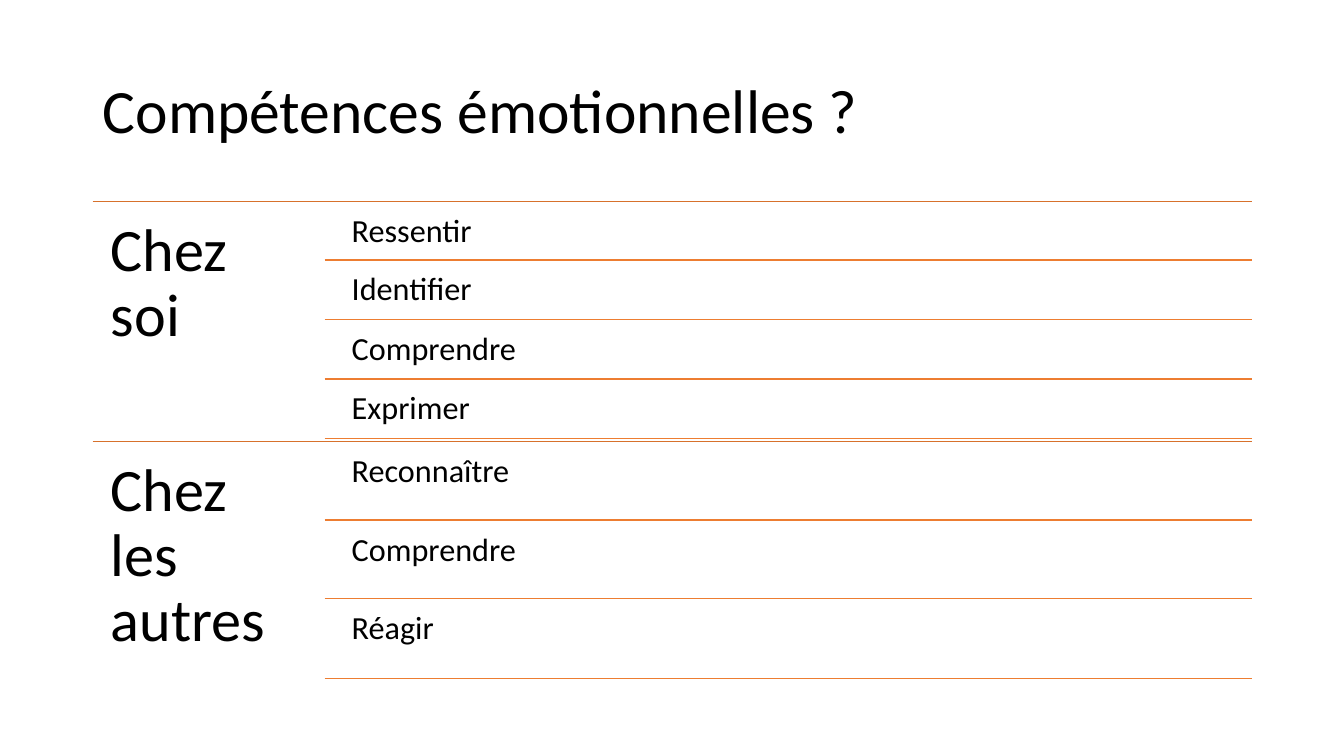
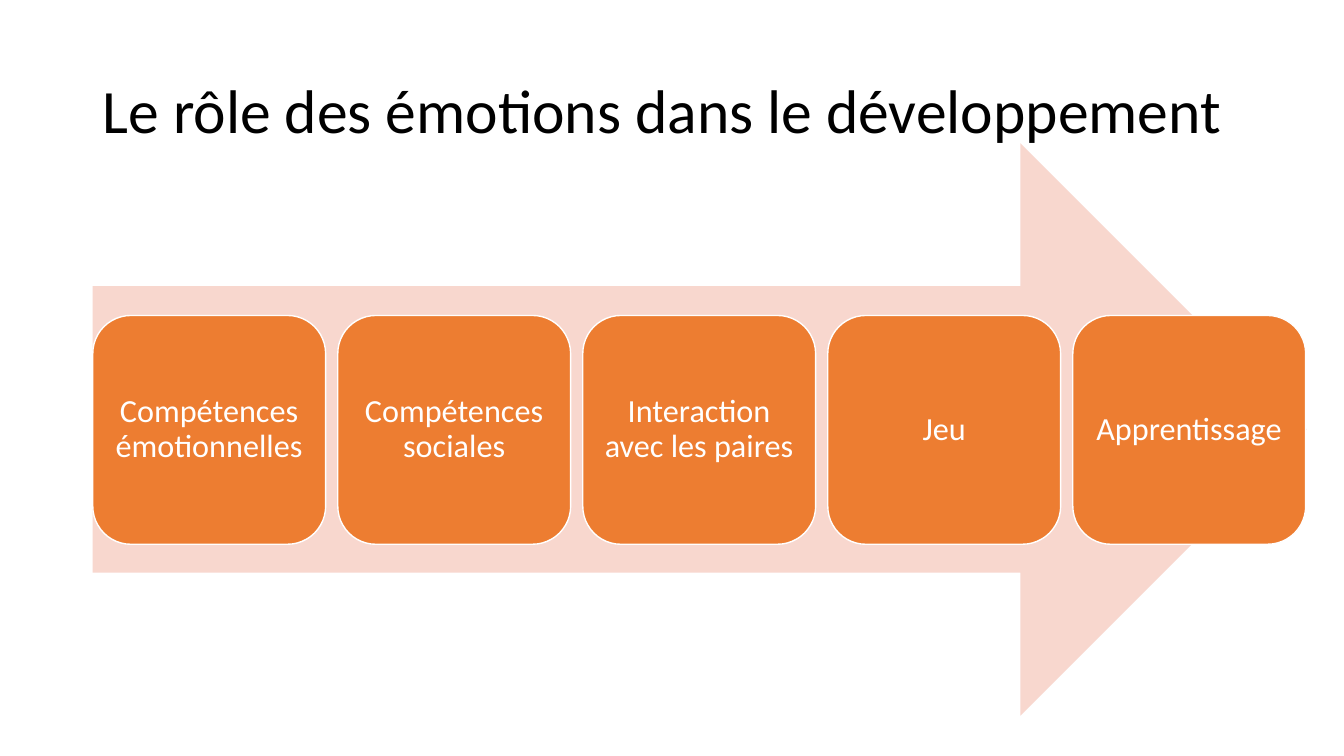
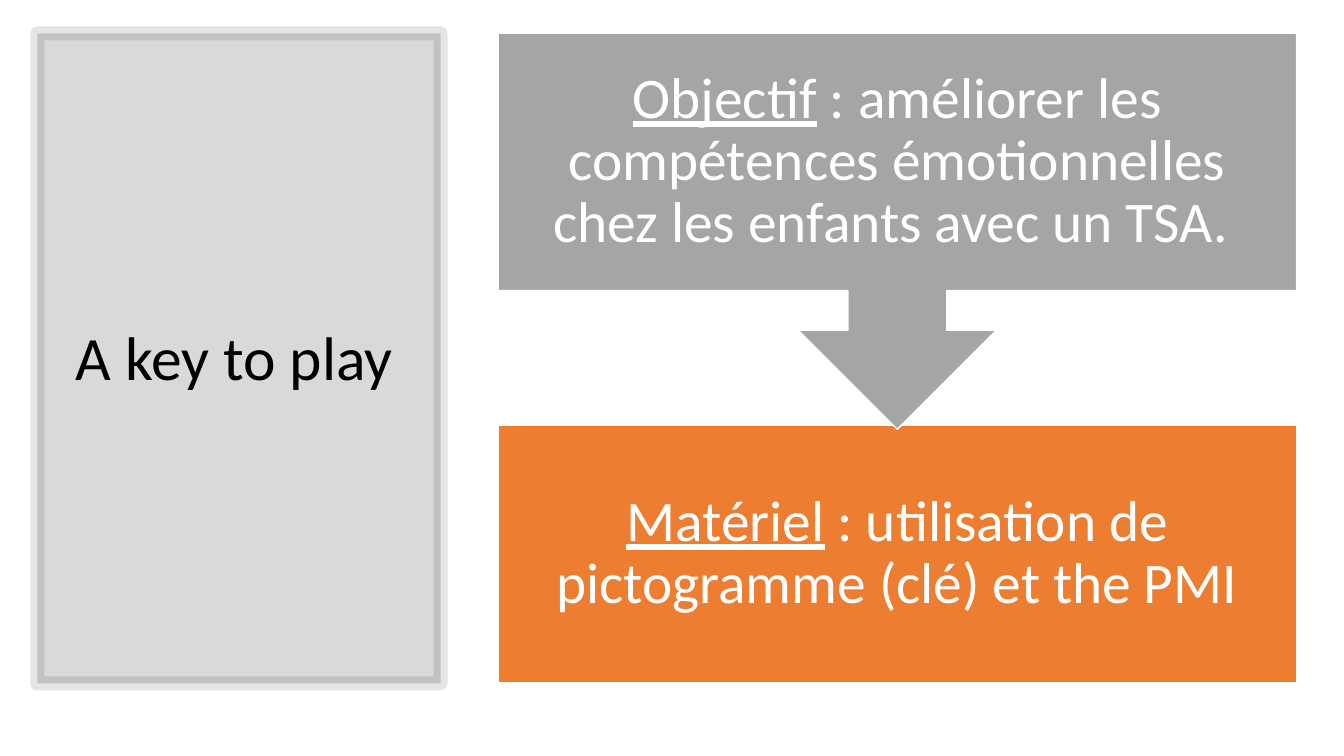
from lxml.etree import SubElement
from pptx import Presentation
from pptx.dml.color import RGBColor
from pptx.enum.shapes import MSO_CONNECTOR as CONNECTOR, MSO_SHAPE as SHAPE
from pptx.enum.text import MSO_ANCHOR as ANCHOR, MSO_AUTO_SIZE as AUTO_SIZE, PP_ALIGN as ALIGN
from pptx.oxml.ns import qn
from pptx.util import Emu, Pt

PX = 9144  # EMU per px, 100 px to the inch
BLACK, WHITE = "000000", "FFFFFF"
ORANGE, DARK_ORANGE, PEACH, GREY = "ED7D31", "D7712C", "F8D7CE", "A5A5A5"


def px(length):
    return Emu(length * PX)


def color(hex_value):
    return RGBColor.from_string(hex_value)


def set_values(target, values):
    for name, value in values.items():
        setattr(target, name, value)


class Deck:
    """Shared style and the slide being drawn."""

    font_name = "Calibri"
    title_size = 44
    line_width = 1

    def __init__(self, width, height):
        self.presentation = Presentation()
        set_values(self.presentation, {"slide_width": px(width), "slide_height": px(height)})
        self.slide = None

    def new_slide(self):
        self.slide = self.presentation.slides.add_slide(self.presentation.slide_layouts[5])

    def place(self, shape, box):
        set_values(shape, dict(zip(("left", "top", "width", "height"), map(px, box))))

    def set_text(self, shape, runs, size, text_color=BLACK, align=ALIGN.LEFT,
                 anchor=ANCHOR.TOP, inset=10, inset_y=None):
        """Fill a shape with one paragraph; runs are (text, underlined) pairs."""
        inset_y = inset if inset_y is None else inset_y
        frame = shape.text_frame
        set_values(frame, {
            "word_wrap": True, "auto_size": AUTO_SIZE.NONE, "vertical_anchor": anchor,
            "margin_left": px(inset), "margin_right": px(inset),
            "margin_top": px(inset_y), "margin_bottom": px(inset_y),
        })
        paragraph = frame.paragraphs[0]
        set_values(paragraph, {"alignment": align, "line_spacing": 0.9})
        for text, underlined in runs:
            run = paragraph.add_run()
            run.text = text
            set_values(run.font, {"name": self.font_name, "size": Pt(size),
                                  "underline": underlined})
            run.font.color.rgb = color(text_color)

    def title(self, text, box=(92, 40, 1150, 145)):
        """Format the title placeholder and bring it in front of what is drawn so far."""
        title = self.slide.shapes.title
        self.place(title, box)
        self.set_text(title, [(text, False)], self.title_size, anchor=ANCHOR.MIDDLE, inset_y=5)
        self.slide.shapes.element.append(title.element)

    def label(self, text, box, size, inset=10):
        text_box = self.slide.shapes.add_textbox(*map(px, box))
        self.set_text(text_box, [(text, False)], size, inset=inset)

    def shape(self, kind, box, fill, line=None, line_width=line_width):
        shape = self.slide.shapes.add_shape(kind, *map(px, box))
        shape.shadow.inherit = False
        shape.fill.solid()
        shape.fill.fore_color.rgb = color(fill)
        if line:
            shape.line.color.rgb = color(line)
            shape.line.width = Pt(line_width)
        else:
            shape.line.fill.background()
        return shape

    def card(self, kind, box, fill, runs, size, inset=10):
        card = self.shape(kind, box, fill, WHITE)
        self.set_text(card, runs, size, WHITE, ALIGN.CENTER, ANCHOR.MIDDLE, inset)

    def panel(self, box, fill_alpha, line_alpha, line_width):
        """Black translucent rectangle; alphas are percentages."""
        panel = self.shape(SHAPE.RECTANGLE, box, BLACK, BLACK, line_width)
        properties = panel.element.spPr
        for owner, alpha in ((properties, fill_alpha), (properties.find(qn("a:ln")), line_alpha)):
            shade = owner.find(qn("a:solidFill")).find(qn("a:srgbClr"))
            SubElement(shade, qn("a:alpha"), val=str(alpha * 1000))

    def rule(self, left, right, top, line_color):
        rule = self.slide.shapes.add_connector(
            CONNECTOR.STRAIGHT, px(left), px(top), px(right), px(top))
        rule.line.color.rgb = color(line_color)
        rule.line.width = Pt(self.line_width)
        SubElement(rule.element.spPr, qn("a:effectLst"))


def skills_slide(deck):
    deck.new_slide()
    deck.title("Compétences émotionnelles ?")
    left, column, right = 92, 322, 1242
    section_height, gap = 238, 3
    rows_height = section_height - gap
    sections = [
        ("Chez soi", ["Ressentir", "Identifier", "Comprendre", "Exprimer"]),
        ("Chez les autres", ["Reconnaître", "Comprendre", "Réagir"]),
    ]
    for index, (heading, skills) in enumerate(sections):
        top = 200 + index * section_height
        deck.rule(left, right, top, DARK_ORANGE)
        deck.label(heading, (left, top, column - left, section_height), 43, inset=18)
        # Rows share the section height equally
        for row, skill in enumerate(skills):
            row_top = top + gap + rows_height * row // len(skills)
            row_bottom = top + rows_height * (row + 1) // len(skills)
            deck.label(skill, (column + 17, row_top, 903, row_bottom - row_top), 23)
            deck.rule(column, right, row_bottom, ORANGE)


def development_slide(deck):
    deck.new_slide()
    left, width, pitch = 92, 231, 243
    deck.shape(SHAPE.RIGHT_ARROW, (left, 142, 1204, 568), PEACH)
    steps = ["Compétences émotionnelles ", "Compétences sociales",
             "Interaction avec les paires", "Jeu", "Apprentissage"]
    for index, step in enumerate(steps):
        box = (left + index * pitch, 313, width, 227)
        deck.card(SHAPE.ROUNDED_RECTANGLE, box, ORANGE, [(step, False)], 23)
    deck.title("Le rôle des émotions dans le développement")


def key_slide(deck):
    deck.new_slide()
    deck.panel((37, 33, 400, 645), fill_alpha=15, line_alpha=10, line_width=10)
    deck.title("A key to play", (65, 70, 346, 575))
    # The callout's arrow tip overlaps the lower card
    cards = [
        (SHAPE.RECTANGLE, 422, 255, ORANGE,
         "Matériel", " : utilisation de pictogramme (clé) et the PMI"),
        (SHAPE.DOWN_ARROW_CALLOUT, 33, 393, GREY,
         "Objectif", " : améliorer les compétences émotionnelles chez les enfants avec un TSA. "),
    ]
    for kind, top, height, fill, lead, text in cards:
        deck.card(kind, (494, top, 792, height), fill, [(lead, True), (text, False)], 41, inset=32)


def main():
    deck = Deck(1333, 750)
    skills_slide(deck)
    development_slide(deck)
    key_slide(deck)
    deck.presentation.save("out.pptx")


if __name__ == "__main__":
    main()
